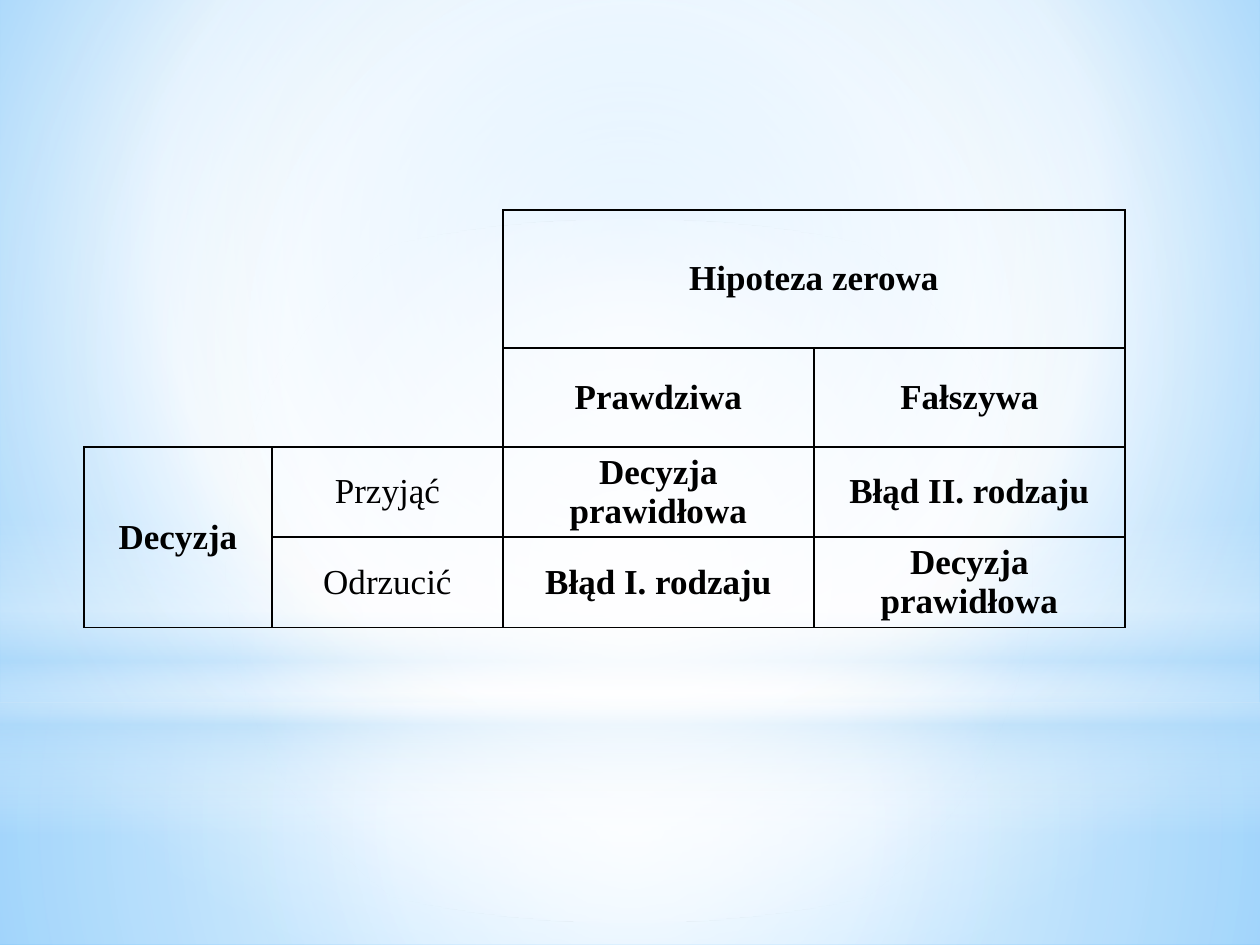
"""Build a slide with a decision table on a soft blue gradient backdrop."""
from lxml import etree
from pptx import Presentation
from pptx import util as u
from pptx.dml.color import RGBColor
from pptx.enum import shapes, text
from pptx.oxml import parse_xml
from pptx.oxml.ns import nsdecls, qn

PX = 914400 // 126
FONT = "Times New Roman"
INK = "000000"
NO_STYLE = "{2D5ABB26-0587-4C30-8999-92F81FD0307C}"

BACKDROP = [(0, "9ED5FF", 100), (60, "FFFFFF", 100), (100, "5BB9FF", 100)]
RECT, OVAL = shapes.MSO_SHAPE.RECTANGLE, shapes.MSO_SHAPE.OVAL
CENTRE = (50, 50, 50, 50)
LAYERS = [
    (RECT, 703, 242, [(0, "FFFFFF", 91), (37, "FFFFFF", 76), (100, "B4DCFA", 79)], CENTRE),
    (RECT, 0, 703, [(0, "FFFFFF", 89), (48, "FFFFFF", 62), (100, "B4DCFA", 79)], CENTRE),
    (RECT, 519, 315, [(0, "FFFFFF", 0), (29, "FFFFFF", 30), (45, "B4DCFA", 40),
                      (55, "FFFFFF", 26), (65, "B4DCFA", 60), (100, "FFFFFF", 0)], None),
    (OVAL, 220, 703, [(0, "FFFFFF", 100), (56, "FFFFFF", 0)], CENTRE),
]

TABLE_LEFT, TABLE_TOP = 84, 210
COLS = [188, 231, 311, 311]
ROWS = [138, 99, 90, 90]
CELLS = [
    ["", "", "Hipoteza zerowa", ""],
    ["", "", "Prawdziwa", "Fałszywa"],
    ["Decyzja", "Przyjąć", "Decyzja\nprawidłowa", "Błąd II. rodzaju"],
    ["", "Odrzucić", "Błąd I. rodzaju", "Decyzja\nprawidłowa"],
]
MERGES = [((0, 2), (0, 3)), ((2, 0), (3, 0))]
PLAIN = {"Przyjąć", "Odrzucić"}
CORNER_SIDES = {(0, 0): "", (0, 1): "R", (1, 0): "B", (1, 1): "RB"}


def px(n):
    return u.Emu(n * PX)


def rgb(value):
    return RGBColor.from_string(value)


def gradient(stops, focus):
    stops_xml = "".join(
        f'<a:gs pos="{pos * 1000}"><a:srgbClr val="{color}">'
        f'<a:alpha val="{alpha * 1000}"/></a:srgbClr></a:gs>'
        for pos, color, alpha in stops)
    if focus:
        sides = " ".join(f'{side}="{v * 1000}"' for side, v in zip("ltrb", focus))
        shade = f'<a:path path="circle"><a:fillToRect {sides}/></a:path>'
    else:
        shade = '<a:lin ang="5400000" scaled="0"/>'
    return parse_xml(f'<a:gradFill {nsdecls("a")} rotWithShape="1">'
                     f'<a:gsLst>{stops_xml}</a:gsLst>{shade}</a:gradFill>')


def set_gradient(fill, parent, stops, focus):
    fill.solid()
    parent.replace(parent.find(qn("a:solidFill")), gradient(stops, focus))


def add_borders(cell, sides):
    tc_pr = cell._tc.get_or_add_tcPr()
    for side in "LRTB":
        if side in sides:
            paint = f'<a:solidFill><a:srgbClr val="{INK}"/></a:solidFill>'
        else:
            paint = "<a:noFill/>"
        tc_pr.append(parse_xml(f'<a:ln{side} {nsdecls("a")} w="12700">{paint}</a:ln{side}>'))


def format_paragraph(p):
    p.alignment = text.PP_ALIGN.CENTER
    p_pr = p._p.get_or_add_pPr()
    p_pr.set("marL", str(px(48)))
    p_pr.set("indent", str(px(-48)))
    tabs = etree.SubElement(p_pr, qn("a:tabLst"))
    etree.SubElement(tabs, qn("a:tab"), pos=str(px(393)), algn="l")
    for r in p.runs:
        r.font.name = FONT
        r.font.size = u.Pt(20)
        r.font.bold = r.text not in PLAIN
        r.font.color.rgb = rgb(INK)


def add_decision_table(s):
    frame = s.shapes.add_table(len(ROWS), len(COLS), px(TABLE_LEFT), px(TABLE_TOP),
                               px(sum(COLS)), px(sum(ROWS)))
    table = frame.table
    table.first_row = table.horz_banding = False
    table._tbl.tblPr.find(qn("a:tableStyleId")).text = NO_STYLE
    for col, width in zip(table.columns, COLS):
        col.width = px(width)
    for row, height in zip(table.rows, ROWS):
        row.height = px(height)
    for i, row in enumerate(CELLS):
        for j, label in enumerate(row):
            cell = table.cell(i, j)
            add_borders(cell, CORNER_SIDES.get((i, j), "LRTB"))
            cell.fill.background()
            cell.vertical_anchor = text.MSO_ANCHOR.MIDDLE
            if label:
                cell.text_frame.text = label
                for p in cell.text_frame.paragraphs:
                    format_paragraph(p)
    for first, last in MERGES:
        table.cell(*first).merge(table.cell(*last))


def main():
    prs = Presentation()
    prs.slide_width, prs.slide_height = px(1260), px(945)
    s = prs.slides.add_slide(prs.slide_layouts[6])
    fill = s.background.fill
    fill.solid()
    bg_pr = s._element.cSld.find(qn("p:bg")).find(qn("p:bgPr"))
    set_gradient(fill, bg_pr, BACKDROP, (20, 10, 20, 60))
    for kind, top, height, stops, focus in LAYERS:
        sp = s.shapes.add_shape(kind, 0, px(top), px(1260), px(height))
        sp.shadow.inherit = False
        sp.line.fill.background()
        set_gradient(sp.fill, sp._element.spPr, stops, focus)
    add_decision_table(s)
    prs.save("out.pptx")


if __name__ == "__main__":
    main()
